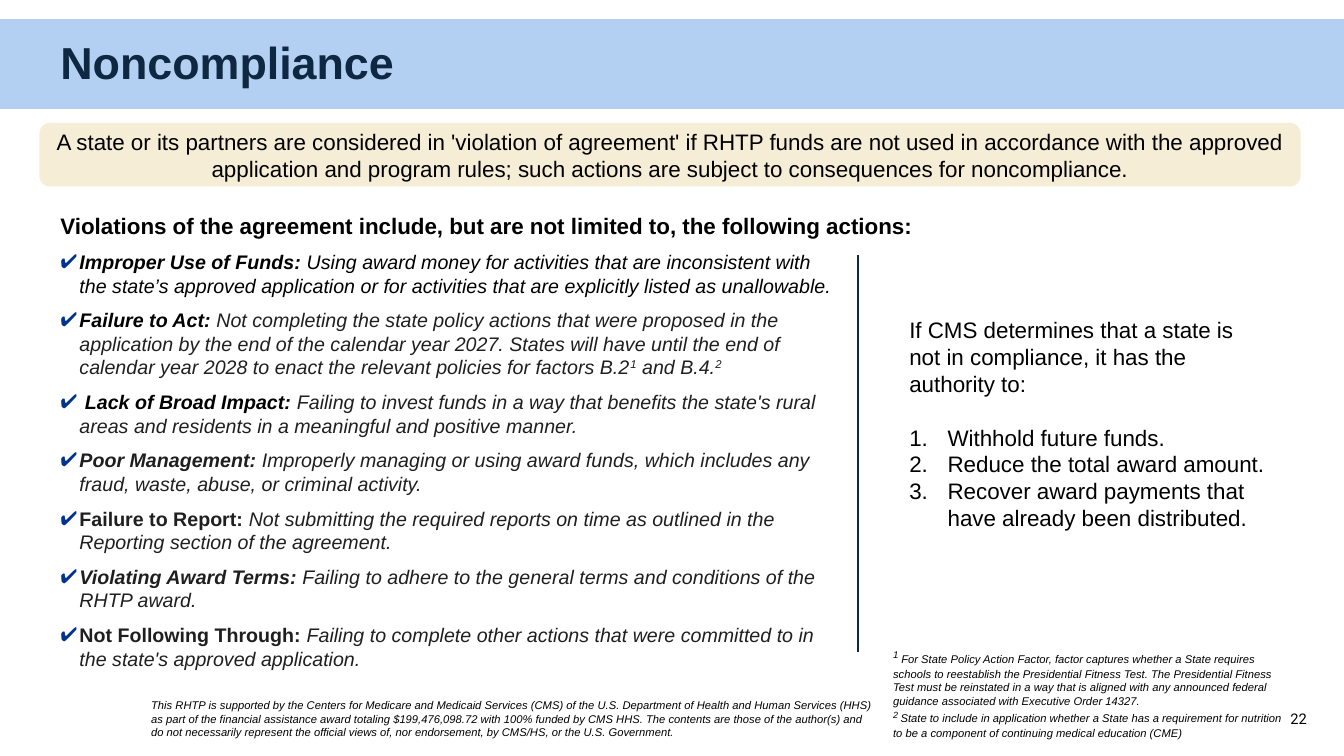
from lxml import etree
from pptx import Presentation
from pptx import util as u
from pptx.dml.color import RGBColor
from pptx.enum import shapes, text
from pptx.oxml.ns import qn

Inches, Pt = u.Inches, u.Pt

BLACK = RGBColor(0, 0, 0)
CHARCOAL = RGBColor(0x1F, 0x1F, 0x1F)
NAVY = RGBColor(0x0E, 0x28, 0x41)
CHECK_BLUE = RGBColor(0x00, 0x33, 0x8D)
BAND_BLUE = RGBColor(0xB3, 0xD0, 0xF3)
CREAM = RGBColor(0xF5, 0xED, 0xD5)

# label, label italic, label colour, description, description colour
VIOLATIONS = [
    ("Improper Use of Funds: ", True, BLACK,
     "Using award money for activities that are inconsistent with the state’s approved "
     "application or for activities that are explicitly listed as unallowable.", BLACK),
    ("Failure to Act: ", True, BLACK,
     "Not completing the state policy actions that were proposed in the application by the "
     "end of the calendar year 2027. States will have until the end of calendar year 2028 to "
     "enact the relevant policies for factors B.2^1^ and B.4.^2", CHARCOAL),
    (" Lack of Broad Impact: ", True, BLACK,
     "Failing to invest funds in a way that benefits the state's rural areas and residents "
     "in a meaningful and positive manner.", CHARCOAL),
    ("Poor Management: ", True, CHARCOAL,
     "Improperly managing or using award funds, which includes any fraud, waste, abuse, or "
     "criminal activity.", CHARCOAL),
    ("Failure to Report: ", False, CHARCOAL,
     "Not submitting the required reports on time as outlined in the Reporting section of "
     "the agreement.", CHARCOAL),
    ("Violating Award Terms: ", True, CHARCOAL,
     "Failing to adhere to the general terms and conditions of the RHTP award.", CHARCOAL),
    ("Not Following Through: ", False, CHARCOAL,
     "Failing to complete other actions that were committed to in the state's approved "
     "application.", CHARCOAL),
]
CONSEQUENCES = [
    "Withhold future funds.",
    "Reduce the total award amount.",
    "Recover award payments that have already been distributed.",
]
# mark, mark size, note
FOOTNOTES = [
    ("1 ", 12,
     "For State Policy Action Factor, factor captures whether a State requires schools to "
     "reestablish the Presidential Fitness Test. The Presidential Fitness Test must be "
     "reinstated in a way that is aligned with any announced federal guidance associated "
     "with Executive Order 14327."),
    ("2 ", 11,
     "State to include in application whether a State has a requirement for nutrition to be "
     "a component of continuing medical education (CME)"),
]


def add_run(p, words, size, color=BLACK, bold=False, italic=False, font="Arial", raised=False):
    r = p.add_run()
    r.text = words
    r.font.size = Pt(size)
    r.font.name = font
    r.font.bold = bold
    r.font.italic = italic
    r.font.color.rgb = color
    if raised:
        r.font._element.set("baseline", "30000")


def add_bullet(p, indent, color, tag, **attrs):
    """Hang the paragraph by indent inches behind a coloured bullet."""
    pPr = p._p.get_or_add_pPr()
    pPr.set("marL", str(Inches(indent)))
    pPr.set("indent", str(-Inches(indent)))
    clr = etree.SubElement(pPr, qn("a:buClr"))
    etree.SubElement(clr, qn("a:srgbClr"), val=str(color))
    etree.SubElement(pPr, qn("a:buFont"), typeface="Arial")
    etree.SubElement(pPr, qn(tag), **attrs)


def add_box(s, x, y, w, h, anchor=text.MSO_ANCHOR.TOP):
    tf = s.shapes.add_textbox(Inches(x), Inches(y), Inches(w), Inches(h)).text_frame
    tf.word_wrap = True
    tf.vertical_anchor = anchor
    return tf


def add_panel(s, kind, x, y, w, h, fill):
    sp = s.shapes.add_shape(kind, Inches(x), Inches(y), Inches(w), Inches(h))
    sp.shadow.inherit = False
    sp.fill.solid()
    sp.fill.fore_color.rgb = fill
    sp.line.fill.background()
    return sp


def add_divider(s, x, top, bottom):
    line = s.shapes.add_connector(shapes.MSO_CONNECTOR.STRAIGHT, Inches(x), Inches(top),
                                  Inches(x), Inches(bottom))
    line.line.color.rgb = NAVY
    line.line.width = Pt(1)
    etree.SubElement(line._element.spPr, qn("a:effectLst"))


def paragraphs(tf, items):
    """Pair each item with its paragraph, the first being the one already there."""
    for i, item in enumerate(items):
        yield (tf.add_paragraph() if i else tf.paragraphs[0]), item


def add_header(s):
    add_panel(s, shapes.MSO_SHAPE.RECTANGLE, 0, 0.19, 13.33, 0.89, BAND_BLUE)
    p = add_box(s, 0.5, 0.19, 12.61, 0.9, text.MSO_ANCHOR.MIDDLE).paragraphs[0]
    p.line_spacing = 0.9
    add_run(p, "Noncompliance", 32, NAVY, bold=True)


def add_callout(s):
    sp = add_panel(s, shapes.MSO_SHAPE.ROUNDED_RECTANGLE, 0.39, 1.22, 12.51, 0.63, CREAM)
    tf = sp.text_frame
    tf.word_wrap = True
    tf.vertical_anchor = text.MSO_ANCHOR.MIDDLE
    p = tf.paragraphs[0]
    p.alignment = text.PP_ALIGN.CENTER
    add_run(p, "A state or its partners are considered in 'violation of agreement' if RHTP funds "
               "are not used in accordance with the approved application and program rules; such "
               "actions are subject to consequences for noncompliance.", 16)


def add_violations(s):
    heading = add_box(s, 0.5, 2.06, 12.11, 0.37).paragraphs[0]
    add_run(heading, "Violations of the agreement include, but are not limited to, the "
                     "following actions:", 16, bold=True)
    tf = add_box(s, 0.5, 2.43, 7.9, 4.31)
    for p, (label, slanted, label_color, detail, color) in paragraphs(tf, VIOLATIONS):
        add_bullet(p, 0.19, CHECK_BLUE, "a:buChar", char="✔")
        if p._p is not tf.paragraphs[0]._p:
            p.space_before = Pt(8)
        add_run(p, label, 14, label_color, bold=True, italic=slanted)
        # every second piece between carets is a footnote mark
        for i, piece in enumerate(detail.split("^")):
            add_run(p, piece, 14, color, italic=True, raised=i % 2 == 1)


def add_consequences(s):
    tf = add_box(s, 8.92, 3.09, 3.72, 1.99)
    add_run(tf.paragraphs[0], "If CMS determines that a state is not in compliance, it has the "
                              "authority to:", 16)
    for i, words in enumerate(CONSEQUENCES):
        p = tf.add_paragraph()
        add_bullet(p, 0.38, BLACK, "a:buAutoNum", type="arabicPeriod")
        if i == 0:
            p.space_before = Pt(19)
        add_run(p, words, 16)


def add_footer(s):
    p = add_box(s, 1.4, 6.88, 7.42, 0.5).paragraphs[0]
    add_run(p, "This RHTP is supported by the Centers for Medicare and Medicaid Services (CMS) of "
               "the U.S. Department of Health and Human Services (HHS) as part of the financial "
               "assistance award totaling $199,476,098.72 with 100% funded by CMS HHS. The "
               "contents are those of the author(s) and do not necessarily represent the official "
               "views of, nor endorsement, by CMS/HS, or the U.S. Government.", 8, italic=True)
    for p, (mark, size, note) in paragraphs(add_box(s, 8.76, 6.37, 4.08, 0.91), FOOTNOTES):
        add_run(p, mark, size, italic=True, raised=True)
        add_run(p, note, 8, italic=True)
    p = add_box(s, 9.95, 6.93, 3.11, 0.4, text.MSO_ANCHOR.MIDDLE).paragraphs[0]
    p.alignment = text.PP_ALIGN.RIGHT
    add_run(p, "22", 10.5, font="Roboto")


def main():
    prs = Presentation()
    prs.slide_width, prs.slide_height = Inches(13.33), Inches(7.5)
    s = prs.slides.add_slide(prs.slide_layouts[6])
    add_header(s)
    add_callout(s)
    add_violations(s)
    add_divider(s, 8.51, 2.53, 6.47)
    add_consequences(s)
    add_footer(s)
    prs.save("out.pptx")


if __name__ == "__main__":
    main()
